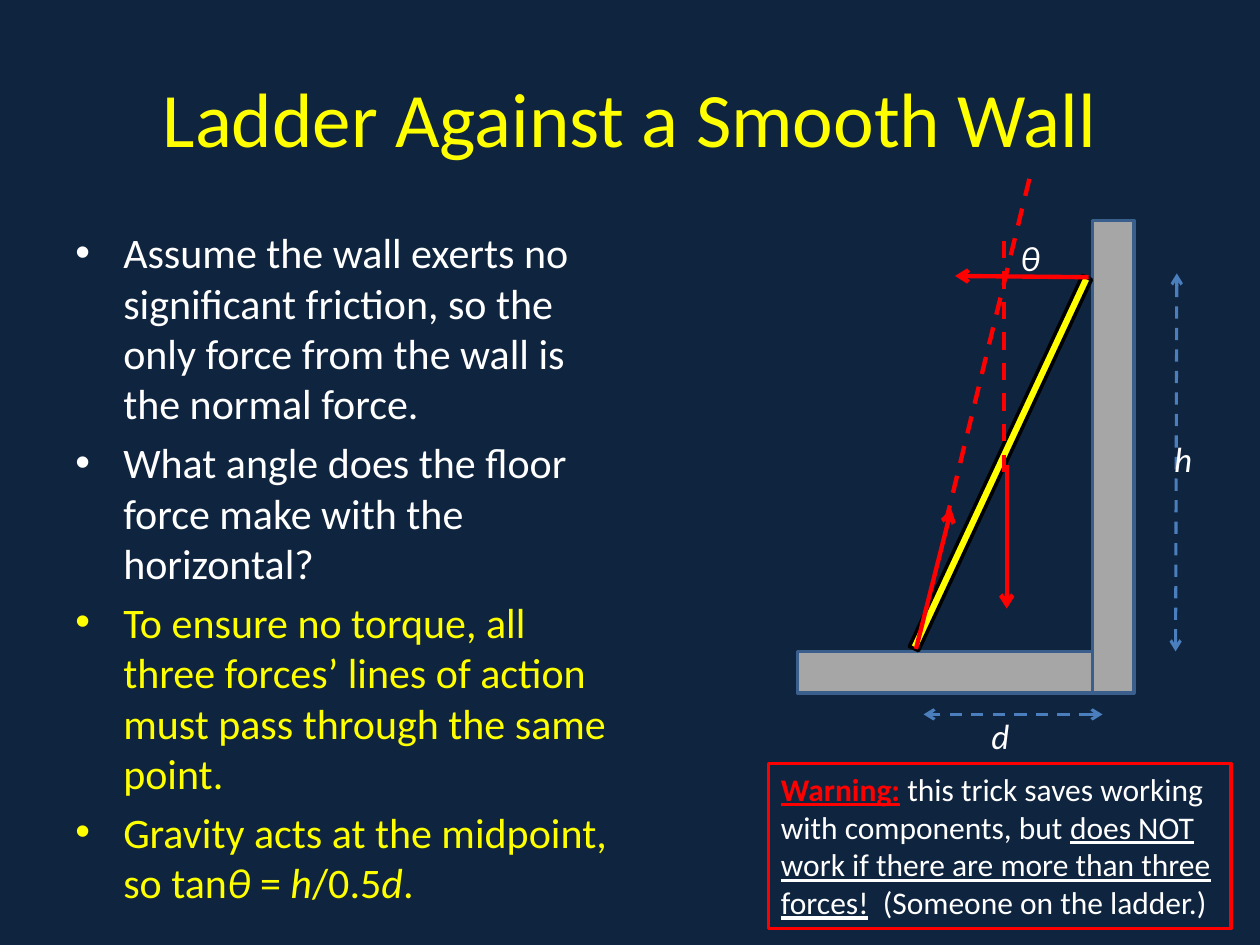
"""Build a physics slide on a ladder leaning against a smooth wall."""
from lxml.etree import SubElement
from pptx import Presentation
from pptx.dml.color import RGBColor
from pptx.enum.dml import MSO_LINE
from pptx.enum.shapes import MSO_CONNECTOR, MSO_SHAPE
from pptx.enum.text import MSO_ANCHOR, MSO_AUTO_SIZE, PP_ALIGN
from pptx.oxml.ns import qn
from pptx.util import Inches, Pt

NAVY = RGBColor(0x0F, 0x24, 0x3E)
YELLOW = RGBColor(0xFF, 0xFF, 0x00)
WHITE = RGBColor(0xFF, 0xFF, 0xFF)
RED = RGBColor(0xFF, 0x00, 0x00)
BLACK = RGBColor(0x00, 0x00, 0x00)
GREY = RGBColor(0xA6, 0xA6, 0xA6)
EDGE_BLUE = RGBColor(0x3A, 0x5F, 0x8C)
DIM_BLUE = RGBColor(0x4B, 0x7E, 0xBC)


class DiagramSlide:
    FONT = "Calibri"
    COLS, ROWS = 100, 75

    def __init__(self, deck):
        self.col = deck.slide_width / self.COLS
        self.row = deck.slide_height / self.ROWS
        self.slide = deck.slides.add_slide(deck.slide_layouts[5])
        self.shapes = self.slide.shapes
        self.slide.background.fill.solid()
        self.slide.background.fill.fore_color.rgb = NAVY

    def grid(self, *cells):
        return [round(cell * (self.row if i % 2 else self.col)) for i, cell in enumerate(cells)]

    def add_runs(self, paragraph, runs, size, align=PP_ALIGN.LEFT):
        paragraph.alignment = align
        for words, color, marks in runs:
            run = paragraph.add_run()
            run.text = words
            font = run.font
            font.name, font.size = self.FONT, Pt(size)
            font.color.rgb = color
            font.bold, font.italic, font.underline = ("b" in marks, "i" in marks, "u" in marks)

    def title(self, box, words):
        heading = self.shapes.title
        heading.left, heading.top, heading.width, heading.height = self.grid(*box)
        heading.text_frame.vertical_anchor = MSO_ANCHOR.MIDDLE
        self.add_runs(heading.text_frame.paragraphs[0], [(words, YELLOW, "")], 44, PP_ALIGN.CENTER)

    def bullets(self, box, items, size=24):
        frame = self.shapes.add_textbox(*self.grid(*box)).text_frame
        frame.word_wrap = True
        for i, runs in enumerate(items):
            paragraph = frame.add_paragraph() if i else frame.paragraphs[0]
            self.add_runs(paragraph, runs, size)
            paragraph.space_before = Pt(size * 0.2)
            props = paragraph._p.get_or_add_pPr()
            props.set("marL", str(Inches(0.38)))
            props.set("indent", str(Inches(-0.38)))
            SubElement(props, qn("a:buFont"), typeface="Arial")
            SubElement(props, qn("a:buChar"), char="•")

    def block(self, box, edge, fill=None, rotation=0):
        block = self.shapes.add_shape(MSO_SHAPE.RECTANGLE, *self.grid(*box))
        block.shadow.inherit = False
        block.rotation = rotation
        block.line.color.rgb, block.line.width = edge, Pt(2)
        if fill is None:
            block.fill.background()
        else:
            block.fill.solid()
            block.fill.fore_color.rgb = fill
        return block

    def note(self, box, edge, runs):
        frame = self.block(box, edge).text_frame
        frame.word_wrap = True
        frame.auto_size = MSO_AUTO_SIZE.SHAPE_TO_FIT_TEXT
        frame.vertical_anchor = MSO_ANCHOR.TOP
        self.add_runs(frame.paragraphs[0], runs, 18)

    def label(self, left, top, symbol):
        frame = self.shapes.add_textbox(*self.grid(left, top, 5, 4.4)).text_frame
        frame.word_wrap = True
        frame.auto_size = MSO_AUTO_SIZE.SHAPE_TO_FIT_TEXT
        self.add_runs(frame.paragraphs[0], [(symbol, WHITE, "i")], 20)

    def line(self, ends, color=RED, width=2.5, dashed=False, arrows=()):
        line = self.shapes.add_connector(MSO_CONNECTOR.STRAIGHT, *self.grid(*ends))
        line.line.color.rgb, line.line.width = color, Pt(width)
        if dashed:
            line.line.dash_style = MSO_LINE.DASH
        for end in arrows:
            SubElement(line._element.spPr.find(qn("a:ln")), qn(f"a:{end}"), type="arrow")
        SubElement(line._element.spPr, qn("a:effectLst"))

    def force(self, *ends):
        self.line(ends, arrows=["tailEnd"])

    def line_of_action(self, *ends):
        self.line(ends, dashed=True)

    def dimension(self, *ends):
        self.line(ends, DIM_BLUE, 1.75, True, ["headEnd", "tailEnd"])


def main():
    deck = Presentation()
    deck.slide_width, deck.slide_height = Inches(10), Inches(7.5)
    page = DiagramSlide(deck)
    page.title((5, 3, 90, 12.5), "Ladder Against a Smooth Wall")
    page.bullets((5, 17.5, 44.2, 55.8), [
        [("Assume the wall exerts no significant friction, so the only force "
          "from the wall is the normal force.", WHITE, "")],
        [("What angle does the floor force make with the horizontal?", WHITE, "")],
        [("To ensure no torque, all three forces’ lines of action must pass "
          "through the same point.", YELLOW, "")],
        [("Gravity acts at the midpoint, so tan", YELLOW, ""), ("θ", YELLOW, "i"),
         (" = ", YELLOW, ""), ("h", YELLOW, "i"), ("/0.5", YELLOW, ""),
         ("d", YELLOW, "i"), (".", YELLOW, "")],
    ])

    floor, wall, ladder = (63.3, 51.7, 26.7, 3.3), (69.6, 34.6, 37.5, 3.3), (79, 20.5, 0.8, 32.5)
    page.block(floor, EDGE_BLUE, GREY)
    page.block(wall, EDGE_BLUE, GREY, 90)
    page.block(ladder, BLACK, YELLOW, 25)

    page.force(79.9, 36.9, 79.9, 48.3)
    page.force(86.4, 22, 75.8, 21.9)
    page.line_of_action(79.7, 19.1, 79.7, 38)
    page.force(72.7, 51.5, 75.5, 40.4)
    page.line_of_action(81.7, 14.2, 75.2, 40.9)
    page.dimension(93.4, 21.7, 93.3, 51.7)
    page.dimension(87.5, 56.7, 73.3, 56.7)

    for left, top, symbol in ((80, 18.3, "θ"), (77.7, 56.2, "d"), (92.2, 34.2, "h")):
        page.label(left, top, symbol)
    page.note((61, 60.6, 36.7, 13.1), RED, [
        ("Warning:", RED, "bu"),
        (" this trick saves working with components, but ", WHITE, ""),
        ("does NOT work if there are more than three forces!", WHITE, "u"),
        ("  (Someone on the ladder.)", WHITE, ""),
    ])
    deck.save("out.pptx")


if __name__ == "__main__":
    main()
